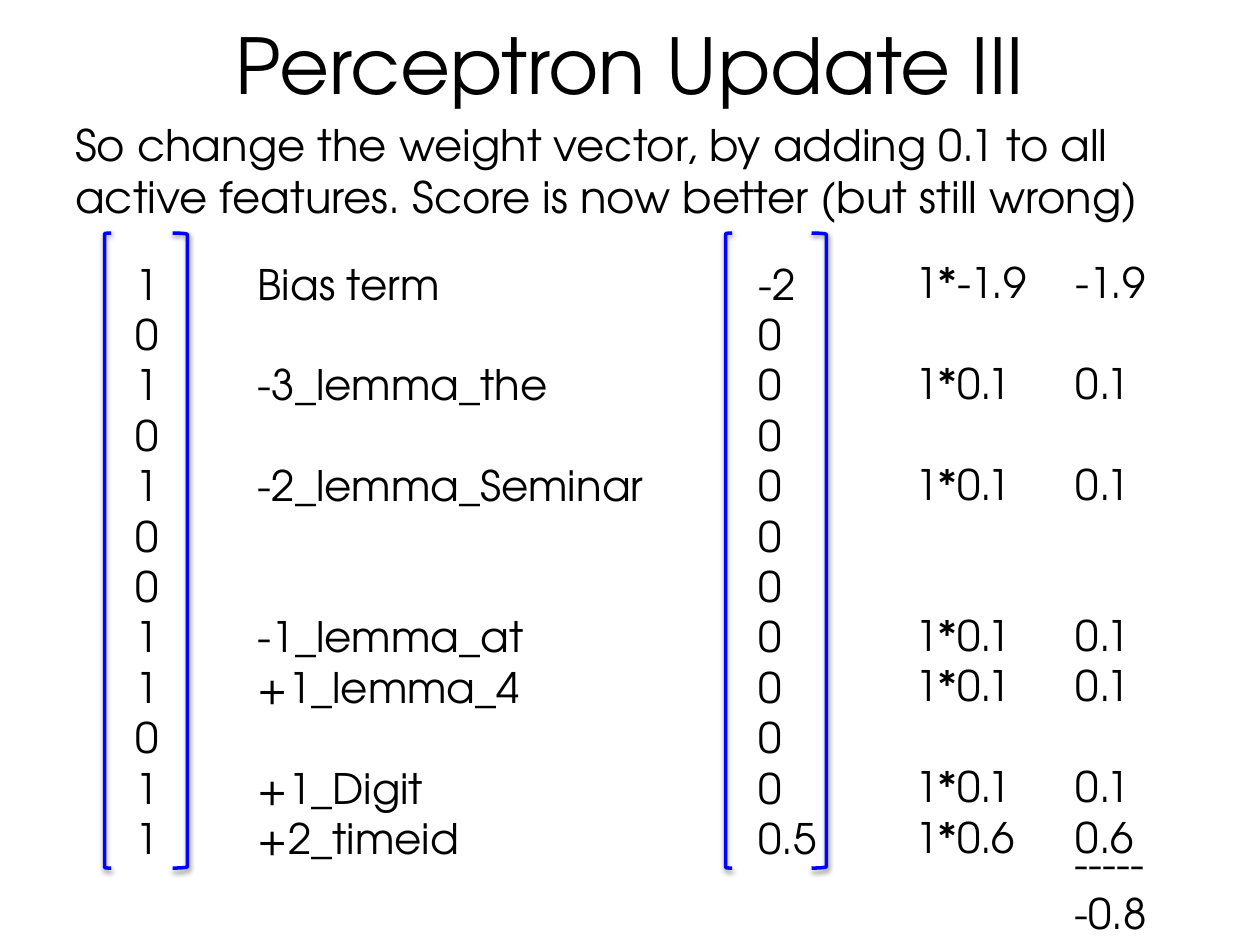
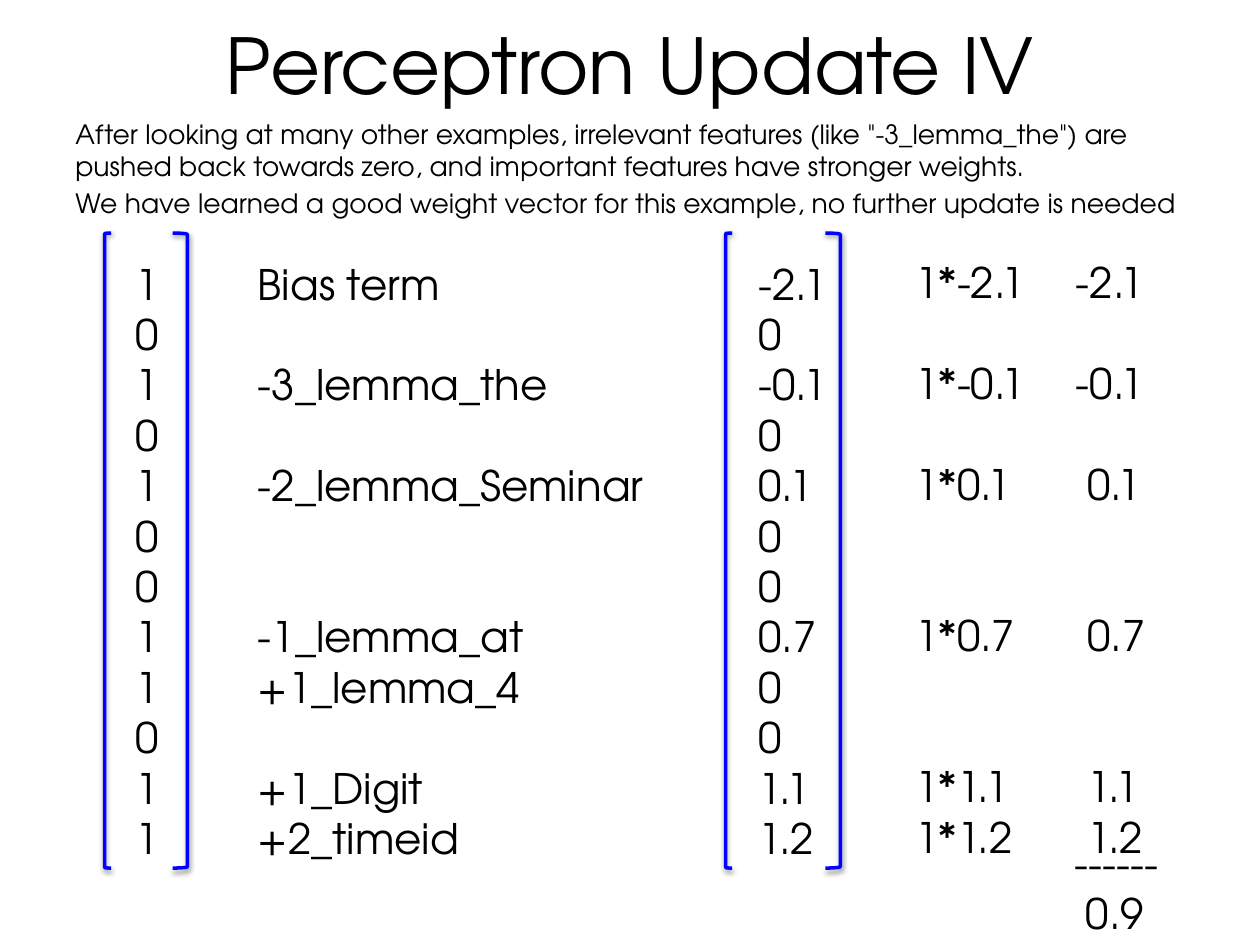
"""Build two slides that follow a perceptron's weight vector through its updates."""
from lxml import etree
from pptx import Presentation
from pptx import util as u
from pptx.dml.color import RGBColor
from pptx.enum import shapes, text
from pptx.oxml.ns import qn

COLORS = {"ink": "000000", "bracket": "0001FF", "shadow": "000000"}
FONT = "TeX Gyre Adventor"
TITLE_SIZE, CELL_SIZE = 44, 24
ROW_PITCH = CELL_SIZE * 1.2
SIGN_INDENT = u.Cm(0.23)
COLUMN_TOP, COLUMN_HEIGHT = 5.08, 12.57
BRACKET_TOP, BRACKET_HEIGHT = 4.7, 12.8
TITLE_BOX = (1.27, 0, 22.86, 2.57)
BODY_BOX = (1.27, 2.26, 22.86, 2.01)

ACTIVE = list("101010011011")
FEATURES = ["Bias term", "", "-3_lemma_the", "", "-2_lemma_Seminar", "", "",
            "-1_lemma_at", "+1_lemma_4", "", "+1_Digit", "+2_timeid"]

UPDATES = [
    {
        "title": "Perceptron Update III",
        "body": ["So change the weight vector, by adding 0.1 to all active features. "
                 "Score is now better (but still wrong)"],
        "body_size": 24.8,
        "weights": ["-2"] + ["0"] * 10 + ["0.5"],
        "weights_width": 1.7,
        "bracket_right": 16.36,
        "terms": ["-1.9", "", "0.1", "", "0.1", "", "", "0.1", "0.1", "", "0.1", "0.6"],
        "total": ["-----", "-0.8"],
        "total_width": 2.11,
        "align_signs": False,
    },
    {
        "title": "Perceptron Update IV",
        "body": ['After looking at many other examples, irrelevant features (like '
                 '"-3_lemma_the") are pushed back towards zero, and important '
                 'features have stronger weights.',
                 "We have learned a good weight vector for this example, "
                 "no further update is needed"],
        "body_size": 15.2,
        "weights": ["-2.1", "0", "-0.1", "0", "0.1", "0", "0", "0.7", "0", "0", "1.1", "1.2"],
        "weights_width": 1.98,
        "bracket_right": 16.64,
        "terms": ["-2.1", "", "-0.1", "", "0.1", "", "", "0.7", "", "", "1.1", "1.2"],
        "total": ["------", "0.9"],
        "total_width": 2.31,
        "align_signs": True,
    },
]


class Deck:
    """Hold the presentation, its style and the current slide."""

    def __init__(self):
        self.presentation = Presentation()
        self.presentation.slide_width = u.Cm(25.4)
        self.presentation.slide_height = u.Cm(19.05)
        self.slide = None

    def apply(self, target, values):
        """Set each attribute named in a dict of format values."""
        for name, value in values.items():
            setattr(target, name, value)

    def style(self, paragraph, size):
        """Give a paragraph the shared font."""
        self.apply(paragraph.font, {"name": FONT, "size": u.Pt(size)})
        paragraph.font.color.rgb = RGBColor.from_string(COLORS["ink"])

    def add_slide(self, title):
        """Start a title-only slide."""
        self.slide = self.presentation.slides.add_slide(self.presentation.slide_layouts[5])
        shape = self.slide.shapes.title
        self.apply(shape, dict(zip(("left", "top", "width", "height"), map(u.Cm, TITLE_BOX))))
        shape.text_frame.text = title
        self.apply(shape.text_frame, {"vertical_anchor": text.MSO_ANCHOR.MIDDLE,
                                      "auto_size": text.MSO_AUTO_SIZE.NONE})
        paragraph = shape.text_frame.paragraphs[0]
        paragraph.alignment = text.PP_ALIGN.CENTER
        self.style(paragraph, TITLE_SIZE)

    def add_text(self, box, lines, size, wrap=True, grow=True):
        """Add a text box and return its paragraphs."""
        frame = self.slide.shapes.add_textbox(*map(u.Cm, box)).text_frame
        fit = text.MSO_AUTO_SIZE.SHAPE_TO_FIT_TEXT if grow else text.MSO_AUTO_SIZE.NONE
        self.apply(frame, {"word_wrap": wrap, "auto_size": fit})
        frame.text = "\n".join(lines)
        for paragraph in frame.paragraphs:
            self.style(paragraph, size)
        return frame.paragraphs

    def add_body(self, lines, size):
        """Add the explanation under the title."""
        for paragraph in self.add_text(BODY_BOX, lines, size, grow=False):
            paragraph.space_before = u.Pt(round(size * 0.2, 1))

    def indent_unsigned(self, paragraphs):
        """Indent numbers without a minus sign so that digits line up."""
        for paragraph in paragraphs:
            if not paragraph.text.startswith("-"):
                paragraph._p.get_or_add_pPr().set("marL", str(SIGN_INDENT))

    def add_column(self, left, width, cells, top=COLUMN_TOP, wrap=False):
        """Add a column of cells, spacing over the empty rows."""
        rows = [row for row, cell in enumerate(cells) if cell]
        paragraphs = self.add_text((left, top, width, COLUMN_HEIGHT),
                                   [cells[row] for row in rows], CELL_SIZE, wrap)
        for paragraph, previous, row in zip(paragraphs[1:], rows, rows[1:]):
            paragraph.space_before = u.Pt((row - previous - 1) * ROW_PITCH)
        return paragraphs

    def add_bracket(self, kind, left, width):
        """Add one vector bracket with a soft shadow."""
        shape = self.slide.shapes.add_shape(
            kind, *map(u.Cm, (left, BRACKET_TOP, width, BRACKET_HEIGHT)))
        shape.fill.background()
        shape.line.color.rgb = RGBColor.from_string(COLORS["bracket"])
        shape.line.width = u.Pt(2)
        shape.shadow.inherit = False
        effects = shape._element.spPr.find(qn("a:effectLst"))
        shadow = etree.SubElement(effects, qn("a:outerShdw"), blurRad=str(u.Pt(3.1)),
                                  dist=str(u.Pt(1.6)), dir="5400000", rotWithShape="0")
        color = etree.SubElement(shadow, qn("a:srgbClr"), val=COLORS["shadow"])
        etree.SubElement(color, qn("a:alpha"), val="38000")

    def add_brackets(self, left, right):
        """Enclose a vector in a pair of brackets."""
        self.add_bracket(shapes.MSO_SHAPE.LEFT_BRACKET, left, 0.13)
        self.add_bracket(shapes.MSO_SHAPE.RIGHT_BRACKET, right, 0.3)

    def add_update(self, update):
        """Build the slide for one update step."""
        self.add_slide(update["title"])
        self.add_body(update["body"], update["body_size"])
        self.add_brackets(2.11, 3.48)
        self.add_column(2.49, 0.99, ACTIVE)
        self.add_column(4.95, 8.53, FEATURES, wrap=True)
        self.add_brackets(14.63, update["bracket_right"])
        self.add_column(15.04, update["weights_width"], update["weights"])
        products = [term and f"1*{term}" for term in update["terms"]]
        self.add_column(18.21, 2.82, products, top=5.05)
        terms = self.add_column(21.44, 1.98, update["terms"], top=5.05)
        total = self.add_text((21.41, 16.76, update["total_width"], 2.31),
                              update["total"], CELL_SIZE)
        if update["align_signs"]:
            self.indent_unsigned([*terms, *total])


def main():
    deck = Deck()
    for update in UPDATES:
        deck.add_update(update)
    deck.presentation.save("out.pptx")


if __name__ == "__main__":
    main()
